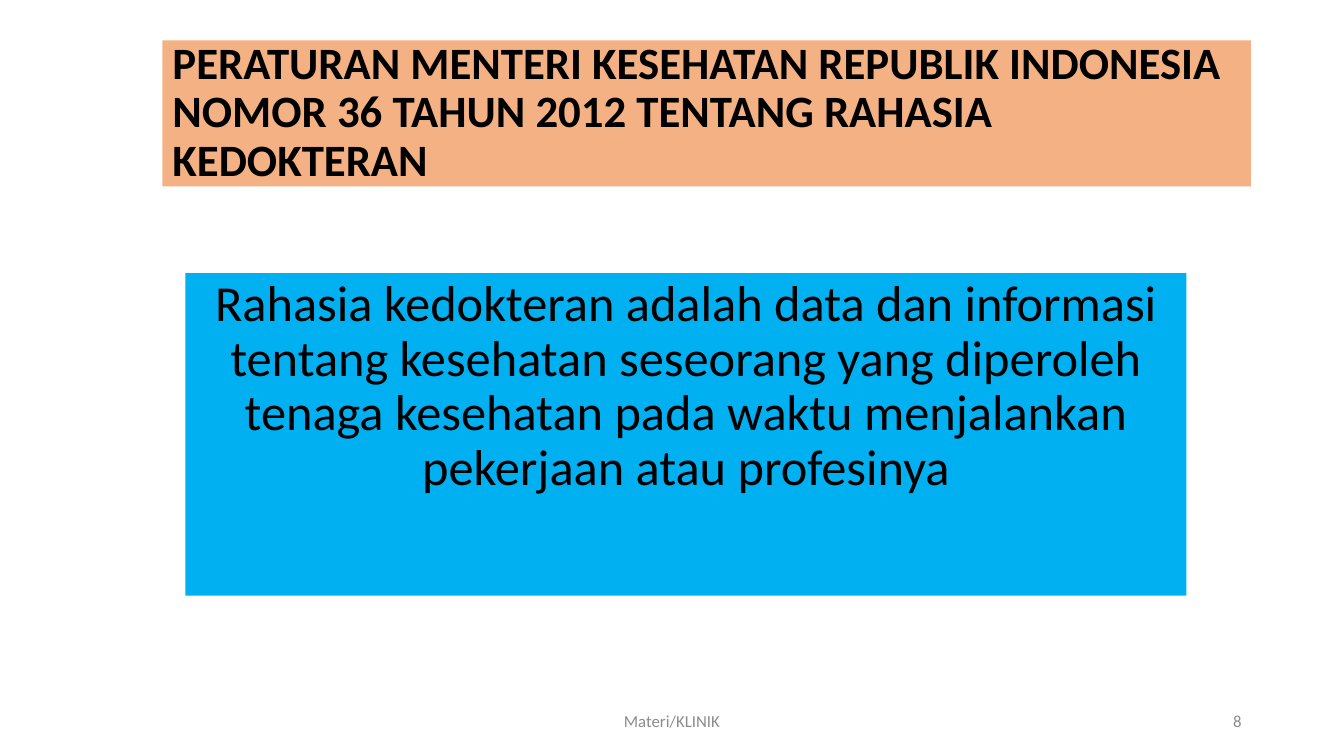
from pptx import Presentation
from pptx.dml.color import RGBColor
from pptx.enum.text import MSO_ANCHOR, MSO_AUTO_SIZE, PP_ALIGN
from pptx.oxml.ns import qn
from pptx.util import Pt
from lxml import etree

COLORS = {"title": "F4B183", "body": "00B0F0", "text": "000000", "footer": "8C8C8C"}
TITLE = ("PERATURAN MENTERI KESEHATAN REPUBLIK INDONESIA\v"
         "NOMOR 36 TAHUN 2012 TENTANG RAHASIA KEDOKTERAN")
DEFINITION = ("Rahasia kedokteran adalah data dan informasi tentang kesehatan "
              "seseorang yang diperoleh tenaga kesehatan pada waktu menjalankan "
              "pekerjaan atau profesinya")


def place(shape, box):
    for name, value in zip(("left", "top", "width", "height"), box):
        setattr(shape, name, Pt(value))


def fill(shape, color):
    shape.fill.solid()
    shape.fill.fore_color.rgb = RGBColor.from_string(COLORS[color])


def write(shape, text, anchor, color, para_format, font_format):
    frame = shape.text_frame
    frame.text = text
    frame.word_wrap = True
    frame.auto_size = MSO_AUTO_SIZE.NONE
    frame.vertical_anchor = anchor
    para = frame.paragraphs[0]
    for name, value in para_format.items():
        setattr(para, name, value)
    for span in para.runs:
        for name, value in {"name": "Calibri", **font_format}.items():
            setattr(span.font, name, value)
        span.font.color.rgb = RGBColor.from_string(COLORS[color])
    return para


def add_title(page, box):
    title = page.shapes.title
    place(title, box)
    fill(title, "title")
    write(title, TITLE, MSO_ANCHOR.MIDDLE, "text",
          {"alignment": PP_ALIGN.LEFT, "line_spacing": 0.9, "space_before": Pt(0)},
          {"size": Pt(32), "bold": True})


def add_definition(page, box):
    body = page.placeholders[1]
    place(body, box)
    fill(body, "body")
    para = write(body, DEFINITION, MSO_ANCHOR.TOP, "text",
                 {"alignment": PP_ALIGN.CENTER, "line_spacing": 0.9,
                  "space_before": Pt(10)},
                 {"size": Pt(36)})
    properties = para._p.get_or_add_pPr()
    properties.set("marL", "0")
    properties.set("indent", "0")
    etree.SubElement(properties, qn("a:buNone"))


def add_footer(page, box):
    left, top, width, height = box
    number_width = 216
    parts = (
        ("Materi/KLINIK", left, width - number_width - 36, PP_ALIGN.CENTER),
        ("8", left + width - number_width, number_width, PP_ALIGN.RIGHT),
    )
    for text, part_left, part_width, alignment in parts:
        label = page.shapes.add_textbox(Pt(part_left), Pt(top), Pt(part_width), Pt(height))
        write(label, text, MSO_ANCHOR.MIDDLE, "footer",
              {"alignment": alignment}, {"size": Pt(12)})


def main():
    deck = Presentation()
    deck.slide_width, deck.slide_height = Pt(960), Pt(540)
    page = deck.slides.add_slide(deck.slide_layouts[1])
    add_title(page, (116, 28.8, 777.6, 104.4))
    add_definition(page, (132.5, 195.1, 715, 230.4))
    add_footer(page, (318, 500.5, 576, 28.75))
    deck.save("out.pptx")


if __name__ == "__main__":
    main()
